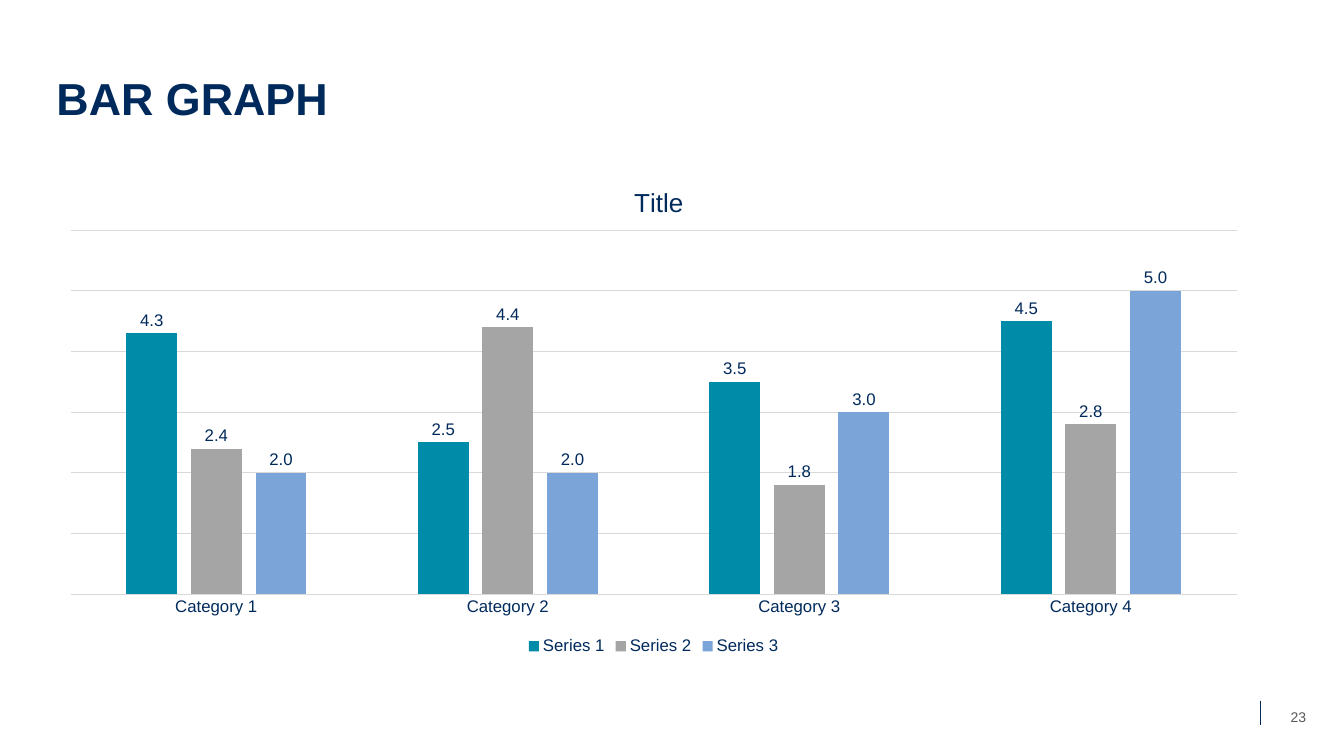
from dataclasses import dataclass

from lxml.etree import SubElement
from pptx import Presentation
from pptx.chart.data import CategoryChartData
from pptx.dml.color import RGBColor
from pptx.enum.chart import XL_CHART_TYPE, XL_LABEL_POSITION, XL_LEGEND_POSITION, XL_TICK_MARK
from pptx.enum.shapes import MSO_CONNECTOR
from pptx.enum.text import MSO_ANCHOR, MSO_AUTO_SIZE, PP_ALIGN
from pptx.oxml import parse_xml
from pptx.oxml.ns import nsdecls, qn
from pptx.util import Pt


@dataclass(frozen=True)
class Theme:
    font: str = "Arial"
    navy: str = "002A5C"
    gray: str = "595959"
    grid: str = "D9D9D9"
    series: tuple = ("008BA9", "A5A5A5", "7BA4D9")
    title_size: float = 32
    chart_title_size: float = 18.6
    chart_size: float = 12
    number_size: float = 10


def format_font(font, name, size, color, bold=False):
    font.name = name
    font.size = Pt(size)
    font.bold = bold
    font.color.rgb = RGBColor.from_string(color)


def write_text(frame, text, *, name, size, color, bold=False,
               align=PP_ALIGN.LEFT, spacing=1.0):
    paragraph = frame.paragraphs[0]
    paragraph.alignment = align
    paragraph.line_spacing = spacing
    run = paragraph.add_run()
    run.text = text
    format_font(run.font, name, size, color, bold)


def format_line(line, color, width):
    line.color.rgb = RGBColor.from_string(color)
    line.width = Pt(width)


def place_in_chart(element, **fractions):
    layout = element.find(qn("c:layout"))
    if layout is None:
        layout = parse_xml(f"<c:layout {nsdecls('c')}/>")
        text = element.find(qn("c:tx"))
        if text is None:
            element.insert(0, layout)
        else:
            text.addnext(layout)
    manual = SubElement(layout, qn("c:manualLayout"))
    if "w" in fractions:
        SubElement(manual, qn("c:layoutTarget")).set("val", "inner")
    for mode in ("xMode", "yMode"):
        SubElement(manual, qn(f"c:{mode}")).set("val", "edge")
    for key, value in fractions.items():
        SubElement(manual, qn(f"c:{key}")).set("val", str(value))


class SlideBuilder:
    def __init__(self, slide, theme):
        self.slide = slide
        self.theme = theme

    def title(self, text, left, top, width, height):
        theme = self.theme
        shape = self.slide.shapes.title
        shape.left, shape.top, shape.width, shape.height = map(Pt, (left, top, width, height))
        frame = shape.text_frame
        frame.auto_size = MSO_AUTO_SIZE.NONE
        frame.vertical_anchor = MSO_ANCHOR.BOTTOM
        write_text(frame, text, name=theme.font, size=theme.title_size,
                   color=theme.navy, bold=True, spacing=0.9)

    def page_number(self, text, left, top, width, height):
        theme = self.theme
        box = self.slide.shapes.add_textbox(*map(Pt, (left, top, width, height)))
        frame = box.text_frame
        frame.word_wrap = True
        frame.vertical_anchor = MSO_ANCHOR.MIDDLE
        write_text(frame, text, name=theme.font, size=theme.number_size,
                   color=theme.gray, align=PP_ALIGN.CENTER)

    def rule(self, x, top, bottom):
        connector = self.slide.shapes.add_connector(
            MSO_CONNECTOR.STRAIGHT, Pt(x), Pt(top), Pt(x), Pt(bottom))
        format_line(connector.line, self.theme.navy, 0.5)
        SubElement(connector._element.spPr, qn("a:effectLst"))

    def column_chart(self, title, categories, series, left, top, width, height):
        theme = self.theme
        data = CategoryChartData(number_format="0.0")
        data.categories = categories
        for name, values in series.items():
            data.add_series(name, values)
        chart = self.slide.shapes.add_chart(
            XL_CHART_TYPE.COLUMN_CLUSTERED, *map(Pt, (left, top, width, height)), data).chart
        format_font(chart.font, theme.font, theme.chart_size, theme.navy)

        chart.has_title = True
        write_text(chart.chart_title.text_frame, title, name=theme.font,
                   size=theme.chart_title_size, color=theme.navy, align=PP_ALIGN.CENTER)
        chart.chart_title.include_in_layout = False
        place_in_chart(chart.chart_title._element, x=0.48, y=0.04)
        place_in_chart(chart._chartSpace.chart.plotArea, x=0.02, y=0.14, w=0.96, h=0.73)

        chart.has_legend = True
        chart.legend.position = XL_LEGEND_POSITION.BOTTOM
        chart.legend.include_in_layout = False
        format_font(chart.legend.font, theme.font, theme.chart_size, theme.navy)

        category_axis = chart.category_axis
        category_axis.major_tick_mark = XL_TICK_MARK.NONE
        format_line(category_axis.format.line, theme.grid, 0.75)
        format_font(category_axis.tick_labels.font, theme.font, theme.chart_size, theme.navy)

        value_axis = chart.value_axis
        value_axis.minimum_scale, value_axis.maximum_scale = 0, 6
        value_axis.major_unit = 1
        value_axis.has_major_gridlines = True
        format_line(value_axis.major_gridlines.format.line, theme.grid, 0.75)
        value_axis.visible = False

        plot = chart.plots[0]
        plot.gap_width, plot.overlap = 219, -27
        plot.vary_by_categories = False
        for column, color in zip(plot.series, theme.series):
            column.format.fill.solid()
            column.format.fill.fore_color.rgb = RGBColor.from_string(color)
            labels = column.data_labels
            labels.show_value = True
            labels.position = XL_LABEL_POSITION.OUTSIDE_END
            labels.number_format = "0.0"
            labels.number_format_is_linked = False
            format_font(labels.font, theme.font, theme.chart_size, theme.navy)


def main():
    presentation = Presentation()
    presentation.slide_width, presentation.slide_height = Pt(960), Pt(540)
    slide = presentation.slides.add_slide(presentation.slide_layouts[5])
    builder = SlideBuilder(slide, Theme())
    builder.rule(900, 500.4, 517.7)
    builder.title("BAR GRAPH", 33.1, 23.8, 748.8, 69.1)
    builder.page_number("23", 910.1, 497.5, 34.6, 28.8)
    builder.column_chart(
        "Title",
        [f"Category {number}" for number in range(1, 5)],
        {
            "Series 1": (4.3, 2.5, 3.5, 4.5),
            "Series 2": (2.4, 4.4, 1.8, 2.8),
            "Series 3": (2, 2, 3, 5),
        },
        33.1, 114.5, 867.6, 356.4)
    presentation.save("out.pptx")


if __name__ == "__main__":
    main()
